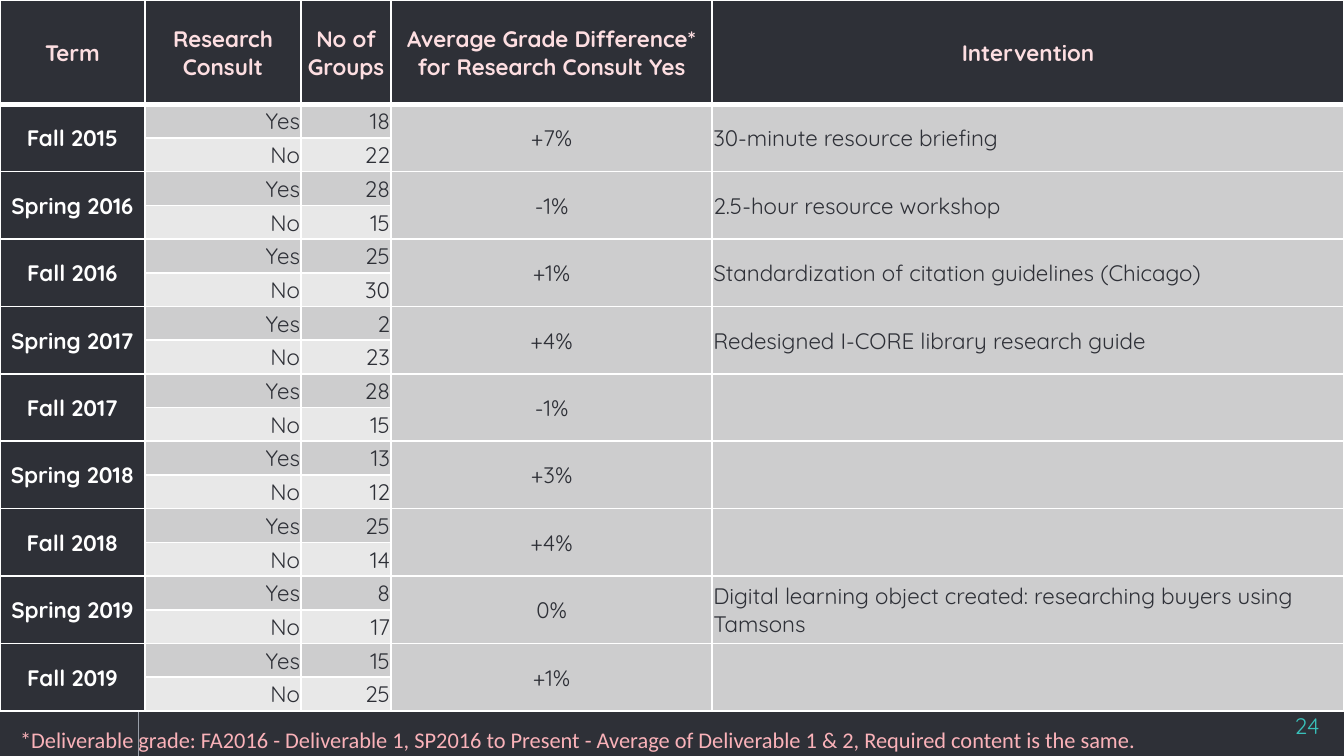
from lxml.etree import SubElement
from pptx import Presentation
from pptx.dml.color import RGBColor
from pptx.enum.shapes import MSO_CONNECTOR, MSO_SHAPE
from pptx.enum.text import MSO_ANCHOR, PP_ALIGN as Align
from pptx.oxml.ns import qn
from pptx.util import Cm, Pt

DARK, WHITE, GRAY = "2E3037", "FFFFFF", "999FA9"
BAND, PALE_BAND = "CDCDCE", "E8E8E8"
BLUSH, PINK, TEAL = "FDDEE1", "FAB2B9", "39C0BA"

WIDTH, HEIGHT = 25.4, 14.29
COLUMN_WIDTHS = [2.74, 2.95, 1.7, 6.07, 11.94]
HEADER_HEIGHT, TERMS_HEIGHT = 1.97, 11.47
HEADINGS = [
    "Term",
    "Research Consult",
    "No of Groups",
    "Average Grade Difference* for Research Consult Yes",
    "Intervention",
]
TERMS = [
    ("Fall 2015", "18", "22", "+7%", "30-minute resource briefing"),
    ("Spring 2016", "28", "15", "-1%", "2.5-hour resource workshop"),
    ("Fall 2016", "25", "30", "+1%", "Standardization of citation guidelines (Chicago)"),
    ("Spring 2017", "2", "23", "+4%", "Redesigned I-CORE library research guide"),
    ("Fall 2017", "28", "15", "-1%", ""),
    ("Spring 2018", "13", "12", "+3%", ""),
    ("Fall 2018", "25", "14", "+4%", ""),
    ("Spring 2019", "8", "17", "0%",
     "Digital learning object created: researching buyers using Tamsons"),
    ("Fall 2019", "15", "25", "+1%", ""),
]
FOOTNOTE = (
    "*Deliverable grade: FA2016 - Deliverable 1, SP2016 to Present - "
    "Average of Deliverable 1 & 2, Required content is the same."
)


def color(value):
    return RGBColor.from_string(value)


class SlideBuilder:
    font = "Quicksand"
    size = Pt(12)

    def __init__(self, slide):
        self.slide = slide

    def background(self, fill):
        self.slide.background.fill.solid()
        self.slide.background.fill.fore_color.rgb = color(fill)

    def add_run(self, paragraph, text, ink, align=Align.LEFT, bold=False, font=None):
        paragraph.alignment = align
        run = paragraph.add_run()
        run.text = text
        run.font.name = font or self.font
        run.font.size = self.size
        run.font.bold = bold
        run.font.color.rgb = color(ink)

    def text(self, left, top, width, height, text, ink, align=Align.LEFT, font=None):
        box = self.slide.shapes.add_textbox(Cm(left), Cm(top), Cm(width), Cm(height))
        box.text_frame.word_wrap = True
        self.add_run(box.text_frame.paragraphs[0], text, ink, align, font=font)
        return box.text_frame

    def vertical_line(self, x, top, bottom, ink):
        line = self.slide.shapes.add_connector(
            MSO_CONNECTOR.STRAIGHT, Cm(x), Cm(top), Cm(x), Cm(bottom))
        line.line.color.rgb = color(ink)
        line.line.width = Pt(0.75)
        SubElement(line._element.spPr, qn("a:effectLst"))

    def circle(self, left, top, diameter, fill, ink):
        shape = self.slide.shapes.add_shape(
            MSO_SHAPE.OVAL, Cm(left), Cm(top), Cm(diameter), Cm(diameter))
        shape.shadow.inherit = False
        shape.fill.solid()
        shape.fill.fore_color.rgb = color(fill)
        shape.line.color.rgb = color(ink)
        shape.line.width = Pt(0.75)

    def table(self, left, top, column_widths, row_heights):
        table = self.slide.shapes.add_table(
            len(row_heights), len(column_widths), Cm(left), Cm(top),
            Cm(sum(column_widths)), Cm(sum(row_heights))).table
        for column, width in zip(table.columns, column_widths):
            column.width = Cm(width)
        for row, height in zip(table.rows, row_heights):
            row.height = Cm(height)
        return table

    def borders(self, cell, ink, bottom):
        properties = cell._tc.get_or_add_tcPr()
        for side, points in (("L", 1), ("R", 1), ("T", 1), ("B", bottom)):
            line = SubElement(properties, qn(f"a:ln{side}"), w=str(Pt(points)))
            fill = SubElement(line, qn("a:solidFill"))
            SubElement(fill, qn("a:srgbClr"), val=ink)

    def cell(self, cell, text, fill, ink, align, bold=False, bottom=1):
        self.borders(cell, WHITE, bottom)
        cell.fill.solid()
        cell.fill.fore_color.rgb = color(fill)
        cell.margin_left = cell.margin_right = cell.margin_top = Cm(0.02)
        cell.margin_bottom = 0
        cell.vertical_anchor = MSO_ANCHOR.MIDDLE
        if text:
            self.add_run(cell.text_frame.paragraphs[0], text, ink, align, bold)

    def tall_cell(self, table, row, column, text, fill, ink, align, bold=False):
        top, bottom = table.cell(row, column), table.cell(row + 1, column)
        top.merge(bottom)
        self.cell(top, text, fill, ink, align, bold)
        self.cell(bottom, "", fill, ink, align)


def build_grades(builder):
    row_height = TERMS_HEIGHT / (2 * len(TERMS))
    heights = [HEADER_HEIGHT] + [row_height] * (2 * len(TERMS))
    table = builder.table(0, 0, COLUMN_WIDTHS, heights)
    for column, heading in enumerate(HEADINGS):
        builder.cell(table.cell(0, column), heading, DARK, BLUSH, Align.CENTER,
                     bold=True, bottom=3)
    for index, (term, yes, no, difference, intervention) in enumerate(TERMS):
        row = 1 + 2 * index
        builder.tall_cell(table, row, 0, term, DARK, WHITE, Align.CENTER, bold=True)
        answers = (("Yes", yes, BAND), ("No", no, PALE_BAND))
        for offset, (answer, groups, fill) in enumerate(answers):
            for column, text in ((1, answer), (2, groups)):
                builder.cell(table.cell(row + offset, column), text, fill, DARK, Align.RIGHT)
        builder.tall_cell(table, row, 3, difference, BAND, DARK, Align.CENTER)
        builder.tall_cell(table, row, 4, intervention, BAND, DARK, Align.LEFT)


def main():
    presentation = Presentation()
    presentation.slide_width = Cm(WIDTH)
    presentation.slide_height = Cm(HEIGHT)
    builder = SlideBuilder(presentation.slides.add_slide(presentation.slide_layouts[6]))
    builder.background(DARK)
    builder.vertical_line(2.62, 0, HEIGHT, GRAY)
    builder.circle(2.34, 6.86, 0.56, DARK, GRAY)
    number = builder.text(23.67, 13.21, 1.52, 0.86, "24", TEAL, Align.RIGHT)
    number.margin_left = number.margin_right = Cm(0.25)
    number.margin_top = number.margin_bottom = Cm(0.25)
    build_grades(builder)
    builder.text(0.13, 13.61, 22.3, 0.76, FOOTNOTE, PINK, font="Calibri")
    presentation.save("out.pptx")


if __name__ == "__main__":
    main()
